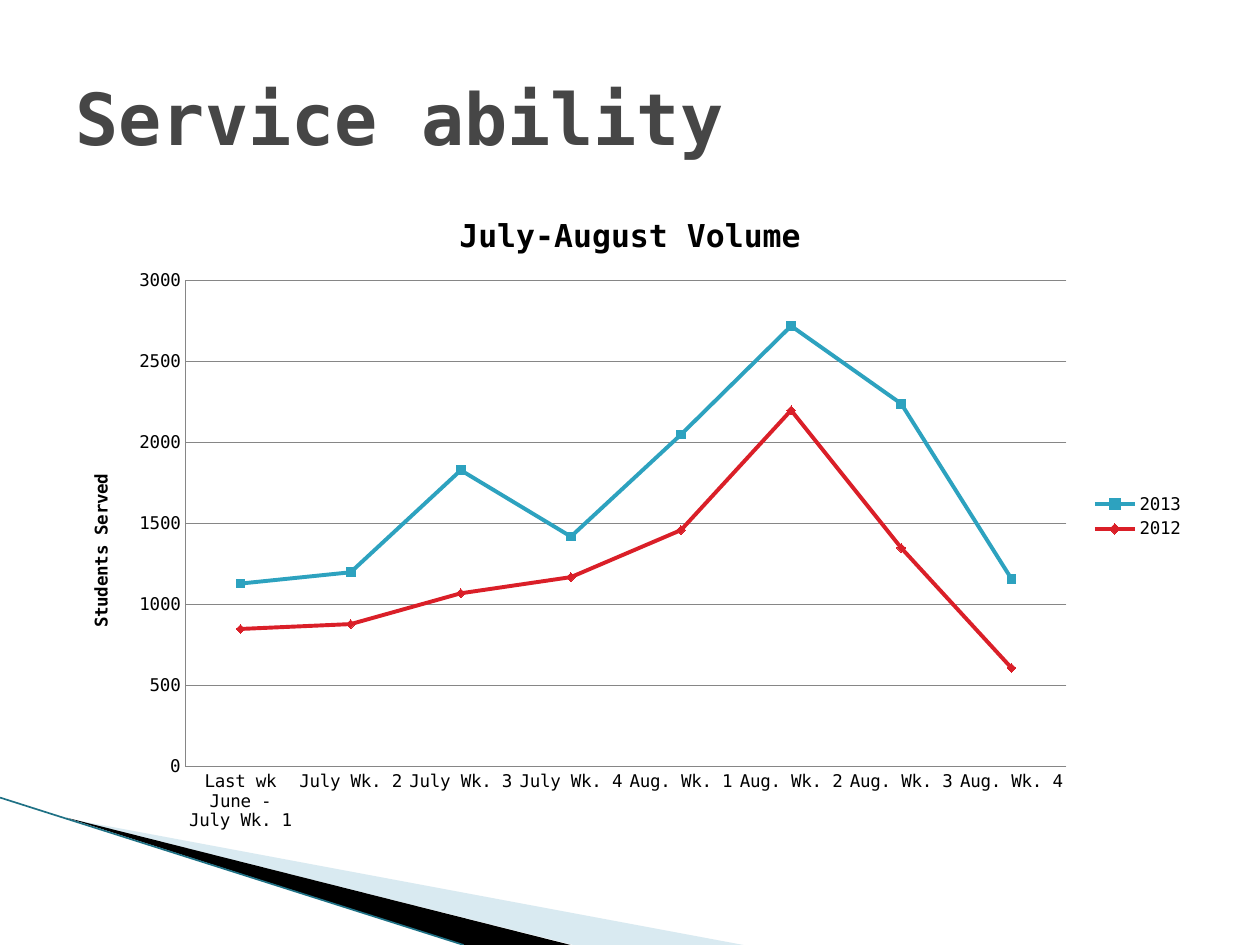
from lxml import etree
from pptx import Presentation
from pptx.chart.data import CategoryChartData
from pptx.dml.color import RGBColor
from pptx.enum.chart import XL_CHART_TYPE, XL_LEGEND_POSITION, XL_MARKER_STYLE, XL_TICK_MARK
from pptx.enum.shapes import MSO_CONNECTOR
from pptx.enum.text import MSO_ANCHOR, PP_ALIGN
from pptx.oxml import parse_xml
from pptx.oxml.ns import nsdecls, qn
from pptx.util import Inches, Pt

FONT = "DejaVu Sans Mono"
COLORS = {"title": "464646", "text": "000000", "grid": "868686", "pale": "A0CBDC",
          "black": "000000", "edge": "1F7185", "2013": "2DA2BF", "2012": "DA1F28"}


def rgb(name):
    return RGBColor.from_string(COLORS[name])


def set_font(font, size, color, bold=False):
    font.name, font.size, font.bold = FONT, Pt(size), bold
    font.color.rgb = rgb(color)


prs = Presentation()
prs.slide_width, prs.slide_height = Inches(10), Inches(7.5)
W, H = prs.slide_width, prs.slide_height
s = prs.slides.add_slide(prs.slide_layouts[5])

wedges = [("pale", [(0.55, 6.5), (5.9, 7.5), (4.55, 7.5)]),
          ("black", [(0.53, 6.49), (4.53, 7.5), (3.68, 7.5)])]
for color, points in wedges:
    corners = [(Inches(x), Inches(y)) for x, y in points]
    builder = s.shapes.build_freeform(*corners[0])
    builder.add_line_segments(corners[1:])
    sp = builder.convert_to_shape()
    sp.shadow.inherit = False
    sp.fill.solid()
    sp.fill.fore_color.rgb = rgb(color)
    sp.line.fill.background()
    if color == "pale":
        clr = sp._element.spPr.find(qn("a:solidFill"))[0]
        etree.SubElement(clr, qn("a:alpha")).set("val", "40000")

edge = s.shapes.add_connector(MSO_CONNECTOR.STRAIGHT, 0, Inches(6.33), Inches(3.68), H)
edge.line.color.rgb = rgb("edge")
edge.line.width = Pt(0.95)
etree.SubElement(edge._element.spPr, qn("a:effectLst"))

data = CategoryChartData()
data.categories = ["Last wk June - July Wk. 1", "July Wk. 2", "July Wk. 3", "July Wk. 4",
                   "Aug. Wk. 1", "Aug. Wk. 2", "Aug. Wk. 3", "Aug. Wk. 4"]
data.add_series("2013", [1130, 1200, 1830, 1420, 2050, 2720, 2240, 1160])
data.add_series("2012", [850, 880, 1070, 1170, 1460, 2200, 1350, 610])
chart = s.shapes.add_chart(XL_CHART_TYPE.LINE_MARKERS, int(W * 0.05), int(H * 0.2),
                           int(W * 0.9), Inches(5.2), data).chart
set_font(chart.font, 10, "text")

chart.has_title = True
p = chart.chart_title.text_frame.paragraphs[0]
p.text = "July-August Volume"
set_font(p.font, 18, "text", True)

chart.has_legend = True
chart.legend.position = XL_LEGEND_POSITION.RIGHT
chart.legend.include_in_layout = False

values = chart.value_axis
values.minimum_scale, values.maximum_scale, values.major_unit = 0, 3000, 500
values.major_gridlines.format.line.color.rgb = rgb("grid")
values.major_gridlines.format.line.width = Pt(0.75)
p = values.axis_title.text_frame.paragraphs[0]
p.text = "Students Served"
set_font(p.font, 10, "text", True)
for axis in (values, chart.category_axis):
    axis.major_tick_mark = axis.minor_tick_mark = XL_TICK_MARK.NONE
    axis.format.line.color.rgb = rgb("grid")
    axis.format.line.width = Pt(0.75)

plot = chart.plots[0]
plot.vary_by_categories = False
for series, style in zip(plot.series, (XL_MARKER_STYLE.SQUARE, XL_MARKER_STYLE.DIAMOND)):
    color = rgb(series.name)
    series.smooth = False
    series.format.line.color.rgb = color
    series.format.line.width = Pt(2.25)
    series.marker.style = style
    series.marker.size = 5
    series.marker.format.fill.solid()
    series.marker.format.fill.fore_color.rgb = color
    series.marker.format.line.color.rgb = color

area = chart._chartSpace.chart.plotArea
for old in area.findall(qn("c:layout")):
    area.remove(old)
shares = {"x": 0.108, "y": 0.14, "w": 0.777, "h": 0.742}
area.insert(0, parse_xml(
    f'<c:layout {nsdecls("c")}><c:manualLayout><c:layoutTarget val="inner"/>'
    '<c:xMode val="edge"/><c:yMode val="edge"/>'
    + "".join(f'<c:{k} val="{v}"/>' for k, v in shares.items())
    + "</c:manualLayout></c:layout>"))

title = s.shapes.title
title.left, title.top = int(W * 0.05), int(H * 0.04)
title.width, title.height = int(W * 0.9), Inches(1.25)
tf = title.text_frame
tf.word_wrap = True
tf.vertical_anchor = MSO_ANCHOR.MIDDLE
p = tf.paragraphs[0]
p.text = "Service ability"
p.alignment = PP_ALIGN.LEFT
set_font(p.font, 41, "title", True)

prs.save("out.pptx")
